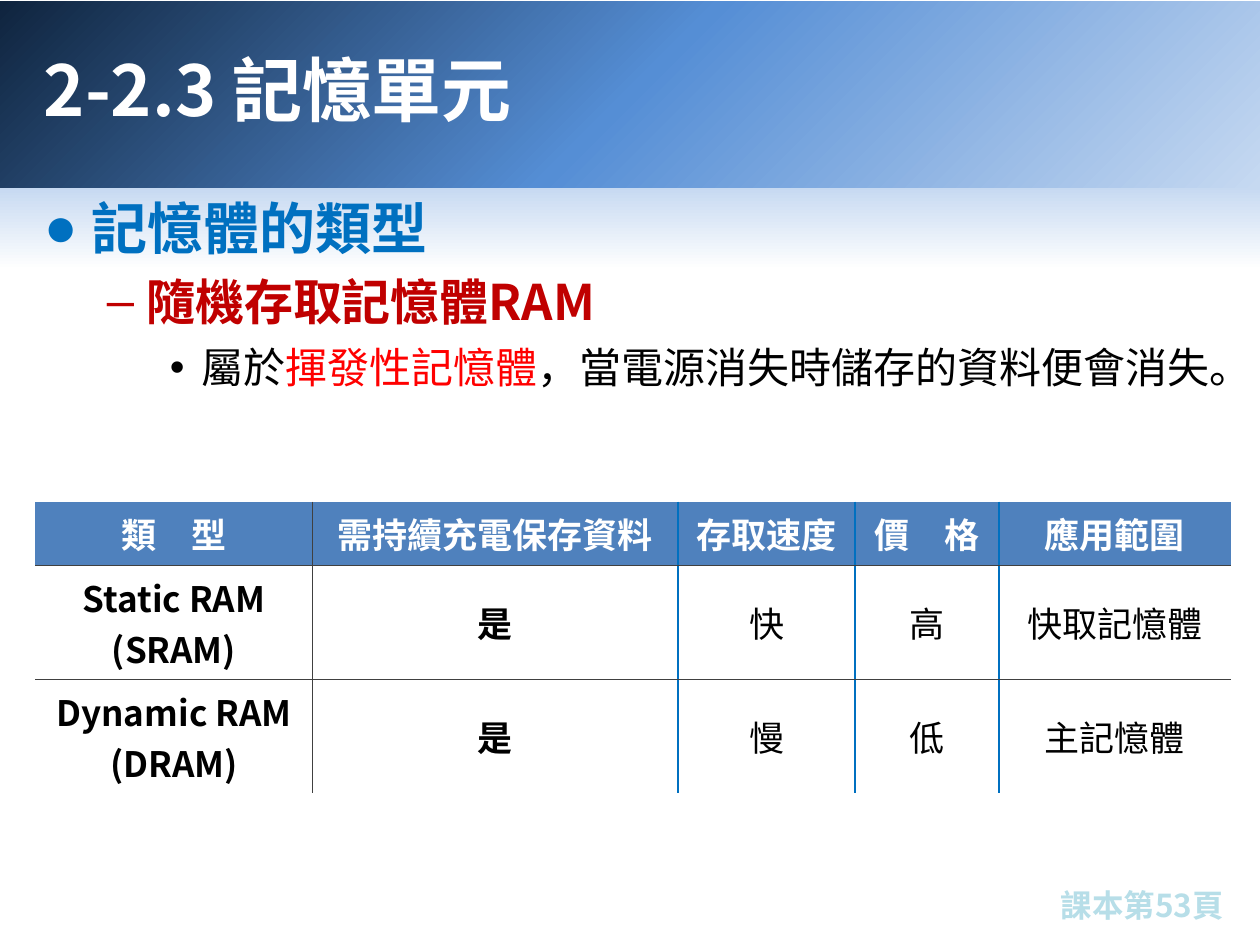
from pptx import Presentation
from pptx.dml.color import RGBColor
from pptx.enum.shapes import MSO_SHAPE as Preset
from pptx.enum.text import MSO_ANCHOR as Anchor, PP_ALIGN as Align
from pptx.oxml.ns import qn
from pptx.util import Pt
from lxml.etree import SubElement

FONT = "Noto Sans CJK SC"
COLORS = {
    "navy": "0F243E", "sky": "558ED5", "pale": "C6D9F1", "white": "FFFFFF",
    "blue": "0070C0", "crimson": "C00000", "red": "FF0000", "black": "000000",
    "header": "4F81BD", "aqua": "B7DEE8", "gray": "404040",
}
COLUMN_WIDTHS = [158.4, 208.8, 101.3, 82.1, 132.7]
ROW_HEIGHTS = [36.4, 65.2, 65.2]
ROWS = [
    ["類\u3000型", "需持續充電保存資料", "存取速度", "價\u3000格", "應用範圍"],
    ["Static RAM\v(SRAM)", "是", "快", "高", "快取記憶體"],
    ["Dynamic RAM\v(DRAM)", "是", "慢", "低", "主記憶體"],
]


def add_text(paragraph, text, size=20, color="black", bold=False):
    for index, line in enumerate(text.split("\v")):
        if index:
            paragraph.add_line_break()
        run = paragraph.add_run()
        run.text = line
        font = run.font
        font.size, font.bold, font.name = Pt(size), bold, FONT
        SubElement(font._element, qn("a:ea"), typeface=FONT)
        font.color.rgb = RGBColor.from_string(COLORS[color])


def add_solid(parent, color):
    fill = SubElement(parent, qn("a:solidFill"))
    SubElement(fill, qn("a:srgbClr"), val=COLORS[color])


def add_band(slide, top, height, stops, angle):
    band = slide.shapes.add_shape(Preset.RECTANGLE, 0, Pt(top), Pt(720), Pt(height))
    band.shadow.inherit = False
    band.line.fill.background()
    band.fill.gradient()
    gradient = band._element.spPr.find(qn("a:gradFill"))
    for child in list(gradient):
        gradient.remove(child)
    stop_list = SubElement(gradient, qn("a:gsLst"))
    for position, color in stops:
        stop = SubElement(stop_list, qn("a:gs"), pos=str(position * 1000))
        SubElement(stop, qn("a:srgbClr"), val=COLORS[color])
    SubElement(gradient, qn("a:lin"), ang=str(angle * 60000), scaled="0")


def add_frame(slide, left, top, width, height, anchor=Anchor.TOP):
    box = slide.shapes.add_textbox(Pt(left), Pt(top), Pt(width), Pt(height))
    frame = box.text_frame
    frame.word_wrap = True
    frame.vertical_anchor = anchor
    return frame


def set_bullet(paragraph, mark, level, indent, hanging):
    paragraph.level = level
    properties = paragraph._p.get_or_add_pPr()
    properties.set("marL", str(Pt(indent)))
    properties.set("indent", str(-Pt(hanging)))
    SubElement(properties, qn("a:buFont"), typeface="Arial")
    SubElement(properties, qn("a:buChar"), char=mark)


def add_outline(slide):
    frame = add_frame(slide, 18, 110.9, 684, 383.8)
    frame.margin_top = Pt(6.6)
    items = [
        ("●", 27, 27, 32, True, [("記憶體的類型", "blue")]),
        ("–", 58.5, 22.5, 28, True, [("隨機存取記憶體RAM", "crimson")]),
        ("•", 90, 18, 24, False, [
            ("屬於", "black"), ("揮發性記憶體", "red"),
            ("，當電源消失時儲存的資料便會消失。", "black")]),
    ]
    for level, (mark, indent, hanging, size, bold, parts) in enumerate(items):
        paragraph = frame.add_paragraph() if level else frame.paragraphs[0]
        set_bullet(paragraph, mark, level, indent, hanging)
        paragraph.line_spacing = 0.82
        if level:
            paragraph.space_before = Pt(12)
        for text, color in parts:
            add_text(paragraph, text, size=size, color=color, bold=bold)


def set_borders(cell, edges):
    properties = cell._tc.get_or_add_tcPr()
    for position, side in enumerate(("lnL", "lnR", "lnT", "lnB")):
        color, width = edges.get(side, (None, 0))
        line = properties.makeelement(qn(f"a:{side}"), {"w": str(Pt(width))})
        properties.insert(position, line)
        if color:
            add_solid(line, color)
        else:
            SubElement(line, qn("a:noFill"))


def cell_edges(row, column):
    hairline, rule = ("gray", 0.25), ("blue", 1)
    edges = {}
    if column > 0:
        edges["lnL"] = hairline if column == 1 else rule
    if column < len(COLUMN_WIDTHS) - 1:
        edges["lnR"] = hairline if column == 0 else rule
    if row > 0:
        edges["lnT"] = hairline
    if row < len(ROWS) - 1:
        edges["lnB"] = hairline
    return edges


def add_memory_table(slide):
    table = slide.shapes.add_table(
        len(ROWS), len(COLUMN_WIDTHS), Pt(20.2), Pt(286.6),
        Pt(sum(COLUMN_WIDTHS)), Pt(sum(ROW_HEIGHTS))).table
    for column, width in zip(table.columns, COLUMN_WIDTHS):
        column.width = Pt(width)
    for row, height in zip(table.rows, ROW_HEIGHTS):
        row.height = Pt(height)
    for row, texts in enumerate(ROWS):
        for column, text in enumerate(texts):
            cell = table.cell(row, column)
            heading = row == 0
            if heading:
                cell.fill.solid()
                cell.fill.fore_color.rgb = RGBColor.from_string(COLORS["header"])
            else:
                cell.fill.background()
                cell.vertical_anchor = Anchor.MIDDLE
            set_borders(cell, cell_edges(row, column))
            paragraph = cell.text_frame.paragraphs[0]
            paragraph.alignment = Align.CENTER
            add_text(paragraph, text, color="white" if heading else "black",
                     bold=heading or column < 2)


def main():
    deck = Presentation()
    deck.slide_width, deck.slide_height = Pt(720), Pt(540)
    slide = deck.slides.add_slide(deck.slide_layouts[6])
    add_band(slide, 106.6, 433.4, [(0, "pale"), (11, "white"), (100, "white")], 90)
    add_band(slide, 0.7, 106.6, [(0, "navy"), (50, "sky"), (100, "pale")], 45)
    title = add_frame(slide, 18, 5.8, 570, 90, Anchor.MIDDLE)
    add_text(title.paragraphs[0], "2-2.3 記憶單元", size=40, color="white", bold=True)
    add_outline(slide)
    add_memory_table(slide)
    page = add_frame(slide, 592.6, 502.6, 120.2, 28.8).paragraphs[0]
    page.alignment = Align.CENTER
    add_text(page, "課本第53頁", size=18, color="aqua", bold=True)
    deck.save("out.pptx")


if __name__ == "__main__":
    main()
